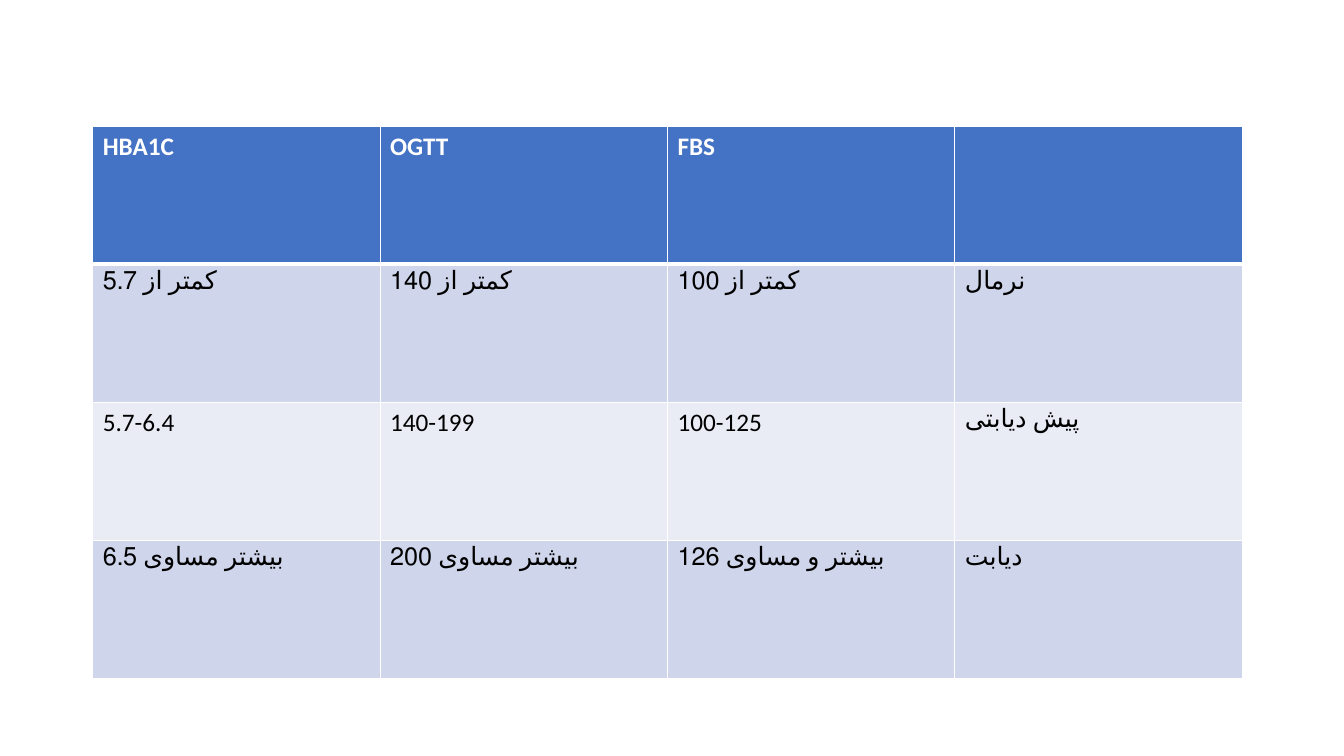
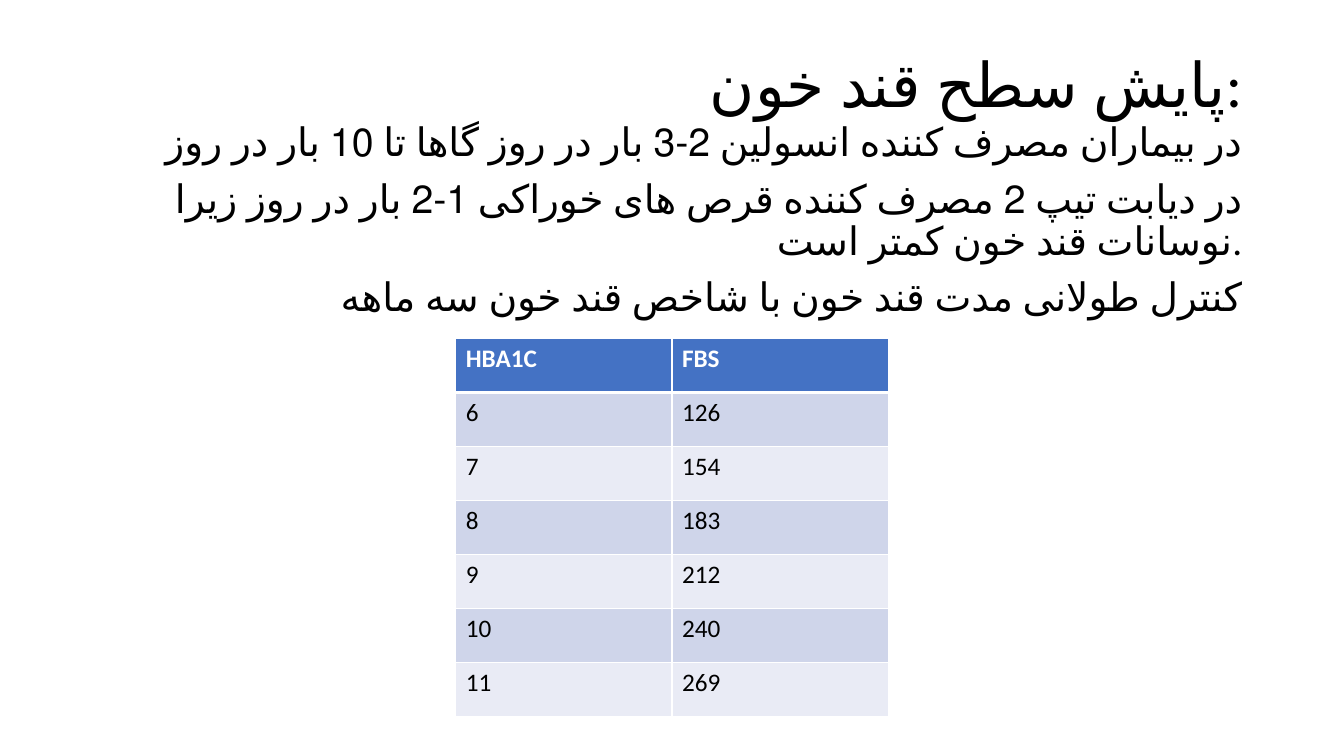
from dataclasses import dataclass

from lxml.etree import SubElement
from pptx import Presentation
from pptx.dml.color import RGBColor
from pptx.enum.lang import MSO_LANGUAGE_ID as Language
from pptx.enum.text import MSO_ANCHOR as Anchor, PP_ALIGN as Align
from pptx.oxml.ns import qn
from pptx.slide import Slide
from pptx.table import _Cell as Cell
from pptx.text.text import _Paragraph as Paragraph
from pptx.util import Inches, Pt


@dataclass(frozen=True)
class Theme:
    font: str = "Calibri"
    text: str = "000000"
    header_text: str = "FFFFFF"
    header_fill: str = "4472C4"
    bands: tuple[str, str] = ("CFD5EA", "E9EBF5")
    border: str = "FFFFFF"
    thin_border: float = 1
    thick_border: float = 3
    title_size: int = 44
    body_size: int = 28
    table_size: int = 18


THEME = Theme()


@dataclass(frozen=True)
class Box:
    left: float
    top: float
    width: float
    height: float

    def lengths(self) -> tuple[Inches, ...]:
        return tuple(map(Inches, (self.left, self.top, self.width, self.height)))


@dataclass(frozen=True)
class TableContent:
    box: Box
    rows: tuple[tuple[str, ...], ...]


@dataclass(frozen=True)
class TextBlock:
    box: Box
    paragraphs: tuple[str, ...]
    size: int
    anchor: Anchor = Anchor.TOP
    space_before: float = 0


DIAGNOSIS = TableContent(
    Box(0.92, 1.25, 11.4, 5.48),
    (
        ("HBA1C", "OGTT", "FBS", ""),
        ("کمتر از 5.7", "کمتر از 140", "کمتر از 100", "نرمال"),
        ("5.7-6.4", "140-199", "100-125", "پیش دیابتی"),
        ("بیشتر مساوی 6.5", "بیشتر مساوی 200", "بیشتر و مساوی 126", "دیابت"),
    ),
)

MONITORING_TITLE = TextBlock(
    Box(0.92, 0.4, 11.5, 0.93),
    ("پایش سطح قند خون:",),
    THEME.title_size,
    Anchor.MIDDLE,
)

MONITORING_BODY = TextBlock(
    Box(0.92, 1.17, 11.5, 5.58),
    (
        "در بیماران مصرف کننده انسولین 2-3 بار در روز گاها تا 10 بار در روز",
        "در دیابت تیپ 2 مصرف کننده قرص های خوراکی 1-2 بار در روز زیرا نوسانات قند خون کمتر است.",
        "کنترل طولانی مدت قند خون با شاخص قند خون سه ماهه",
    ),
    THEME.body_size,
    space_before=10,
)

HBA1C_TO_FBS = TableContent(
    Box(4.52, 3.36, 4.29, 3.75),
    (
        ("HBA1C", "FBS"),
        ("6", "126"),
        ("7", "154"),
        ("8", "183"),
        ("9", "212"),
        ("10", "240"),
        ("11", "269"),
    ),
)


def apply_format(target: object, values: dict[str, object]) -> None:
    for name, value in values.items():
        setattr(target, name, value)


def write_run(paragraph: Paragraph, text: str, size: int, color: str, bold: bool = False) -> None:
    run = paragraph.add_run()
    run.text = text
    apply_format(run.font, {
        "name": THEME.font,
        "size": Pt(size),
        "bold": bold,
        "language_id": Language.ENGLISH_US if text.isascii() else Language.FARSI,
    })
    run.font.color.rgb = RGBColor.from_string(color)


def add_text(slide: Slide, block: TextBlock) -> None:
    frame = slide.shapes.add_textbox(*block.box.lengths()).text_frame
    apply_format(frame, {"word_wrap": True, "vertical_anchor": block.anchor})
    for index, text in enumerate(block.paragraphs):
        paragraph = frame.add_paragraph() if index else frame.paragraphs[0]
        apply_format(paragraph, {
            "alignment": Align.RIGHT,
            "line_spacing": 0.9,
            "space_before": Pt(block.space_before),
        })
        write_run(paragraph, text, block.size, THEME.text)


def set_borders(cell: Cell, row: int) -> None:
    """Draw thin cell borders, with a thick rule under the header row."""
    properties = cell._tc.get_or_add_tcPr()
    thick_side = {0: "lnB", 1: "lnT"}.get(row)
    for side in ("lnL", "lnR", "lnT", "lnB"):
        width = THEME.thick_border if side == thick_side else THEME.thin_border
        line = SubElement(properties, qn(f"a:{side}"), w=str(Pt(width)))
        fill = SubElement(line, qn("a:solidFill"))
        SubElement(fill, qn("a:srgbClr"), val=THEME.border)


def add_table(slide: Slide, content: TableContent) -> None:
    row_count, column_count = len(content.rows), len(content.rows[0])
    table = slide.shapes.add_table(row_count, column_count, *content.box.lengths()).table
    for row, texts in enumerate(content.rows):
        is_header = row == 0
        fill = THEME.header_fill if is_header else THEME.bands[(row - 1) % 2]
        color = THEME.header_text if is_header else THEME.text
        for column, text in enumerate(texts):
            cell = table.cell(row, column)
            set_borders(cell, row)
            cell.fill.solid()
            cell.fill.fore_color.rgb = RGBColor.from_string(fill)
            if text:
                write_run(cell.text_frame.paragraphs[0], text, THEME.table_size, color, is_header)


def main() -> None:
    presentation = Presentation()
    apply_format(presentation, {"slide_width": Inches(13.33), "slide_height": Inches(7.5)})
    blank = presentation.slide_layouts[6]

    add_table(presentation.slides.add_slide(blank), DIAGNOSIS)

    monitoring = presentation.slides.add_slide(blank)
    for block in (MONITORING_TITLE, MONITORING_BODY):
        add_text(monitoring, block)
    add_table(monitoring, HBA1C_TO_FBS)

    presentation.save("out.pptx")


if __name__ == "__main__":
    main()
